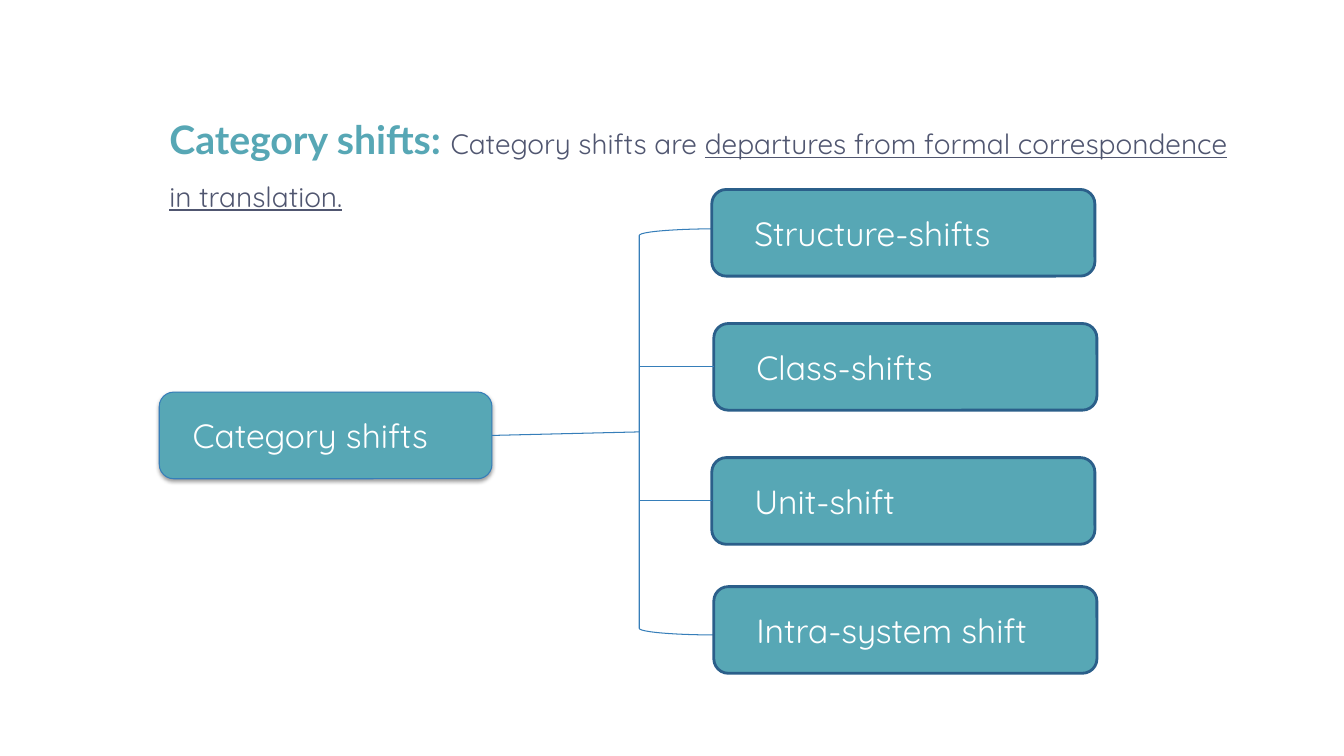
from dataclasses import dataclass

from lxml import etree
from pptx import Presentation
from pptx.dml.color import RGBColor
from pptx.enum.shapes import MSO_CONNECTOR, MSO_SHAPE
from pptx.enum.text import MSO_ANCHOR, MSO_AUTO_SIZE, PP_ALIGN
from pptx.oxml.ns import qn
from pptx.util import Pt

PX = 9144  # EMU per px, 100 px to the inch
COLORS = {
    "teal": "57A7B5",
    "slate": "505670",
    "blue": "367EB9",
    "navy": "2B5F8A",
    "white": "FFFFFF",
    "black": "000000",
}
ROUNDED = MSO_SHAPE.ROUNDED_RECTANGLE
BRACKET = MSO_SHAPE.LEFT_BRACKET
STRAIGHT = MSO_CONNECTOR.STRAIGHT
LEFT = PP_ALIGN.LEFT
TOP, MIDDLE = MSO_ANCHOR.TOP, MSO_ANCHOR.MIDDLE
LEFT_SIDE, RIGHT_SIDE = 1, 3
BODY_FONT = "Quicksand"
BOX_HEIGHT = 86


@dataclass(frozen=True)
class Box:
    label: str
    left: int
    top: int
    width: int = 380
    inset: int = 38
    line: str = "navy"
    line_width: float = 2


@dataclass(frozen=True)
class TextRun:
    text: str
    font: str
    size: int
    color: str
    bold: bool = False
    underline: bool = False


ROOT = Box("Category shifts", 158, 389, 330, 29, "blue", 0.75)
BRANCHES = [
    Box("Structure-shifts", 706, 188),
    Box("Class-shifts", 708, 321),
    Box("Unit-shift", 706, 454),
    Box("Intra-system shift", 708, 582),
]
HEADING = [
    TextRun("Category shifts: ", "Lato", 28, "teal", bold=True),
    TextRun("Category shifts are ", BODY_FONT, 20, "slate"),
    TextRun("departures from formal correspondence in translation.",
            BODY_FONT, 20, "slate", underline=True),
]


def rgb(name: str) -> RGBColor:
    return RGBColor.from_string(COLORS[name])


def add_run(paragraph, spec_run: TextRun) -> None:
    run = paragraph.add_run()
    run.text = spec_run.text
    font = run.font
    font.name = spec_run.font
    font.size = Pt(spec_run.size)
    font.bold = spec_run.bold
    font.underline = spec_run.underline
    font.color.rgb = rgb(spec_run.color)


def set_line(shape, color: str, width: float) -> None:
    shape.line.color.rgb = rgb(color)
    shape.line.width = Pt(width)


def format_heading(title) -> None:
    title.left, title.top = 158 * PX, 86 * PX
    title.width, title.height = 1074 * PX, 131 * PX
    frame = title.text_frame
    frame.word_wrap = True
    frame.auto_size = MSO_AUTO_SIZE.SHAPE_TO_FIT_TEXT
    frame.vertical_anchor = TOP
    paragraph = frame.paragraphs[0]
    paragraph.alignment = LEFT
    paragraph.line_spacing = 1.5
    for heading_run in HEADING:
        add_run(paragraph, heading_run)


def add_box(slide, box: Box):
    shape = slide.shapes.add_shape(
        ROUNDED, box.left * PX, box.top * PX, box.width * PX, BOX_HEIGHT * PX)
    shape.shadow.inherit = False
    shape.fill.solid()
    shape.fill.fore_color.rgb = rgb("teal")
    set_line(shape, box.line, box.line_width)
    frame = shape.text_frame
    frame.word_wrap = True
    frame.vertical_anchor = MIDDLE
    frame.margin_left = box.inset * PX
    paragraph = frame.paragraphs[0]
    paragraph.alignment = LEFT
    add_run(paragraph, TextRun(box.label, BODY_FONT, 24, "white"))
    return shape


def add_drop_shadow(shape) -> None:
    effects = shape._element.spPr.find(qn("a:effectLst"))
    shadow = etree.SubElement(
        effects, qn("a:outerShdw"), blurRad=str(Pt(3.1)), dist=str(Pt(1.6)),
        dir="5400000", algn="ctr", rotWithShape="0")
    color = etree.SubElement(shadow, qn("a:srgbClr"), val=COLORS["black"])
    etree.SubElement(color, qn("a:alpha"), val="38000")


def add_bracket(slide):
    bracket = slide.shapes.add_shape(
        BRACKET, 634 * PX, 227 * PX, 79 * PX, 403 * PX)
    bracket.shadow.inherit = False
    bracket.fill.background()
    set_line(bracket, "blue", 0.75)
    return bracket


def add_link(slide, start_x: int, start_y: int, end_x: int, end_y: int):
    link = slide.shapes.add_connector(STRAIGHT, start_x, start_y, end_x, end_y)
    set_line(link, "blue", 0.75)
    etree.SubElement(link._element.spPr, qn("a:effectLst"))
    return link


def main() -> None:
    presentation = Presentation()
    presentation.slide_width = 1333 * PX
    presentation.slide_height = 750 * PX
    slide = presentation.slides.add_slide(presentation.slide_layouts[5])

    format_heading(slide.shapes.title)
    root = add_box(slide, ROOT)
    add_drop_shadow(root)
    bracket = add_bracket(slide)
    branches = [add_box(slide, box) for box in BRANCHES]

    trunk = add_link(slide, 0, 0, 0, 0)
    trunk.begin_connect(root, RIGHT_SIDE)
    trunk.end_connect(bracket, LEFT_SIDE)
    for branch in branches[1:3]:
        middle = branch.top + branch.height // 2
        link = add_link(slide, bracket.left, middle, branch.left, middle)
        link.end_connect(branch, LEFT_SIDE)

    presentation.save("out.pptx")


if __name__ == "__main__":
    main()
